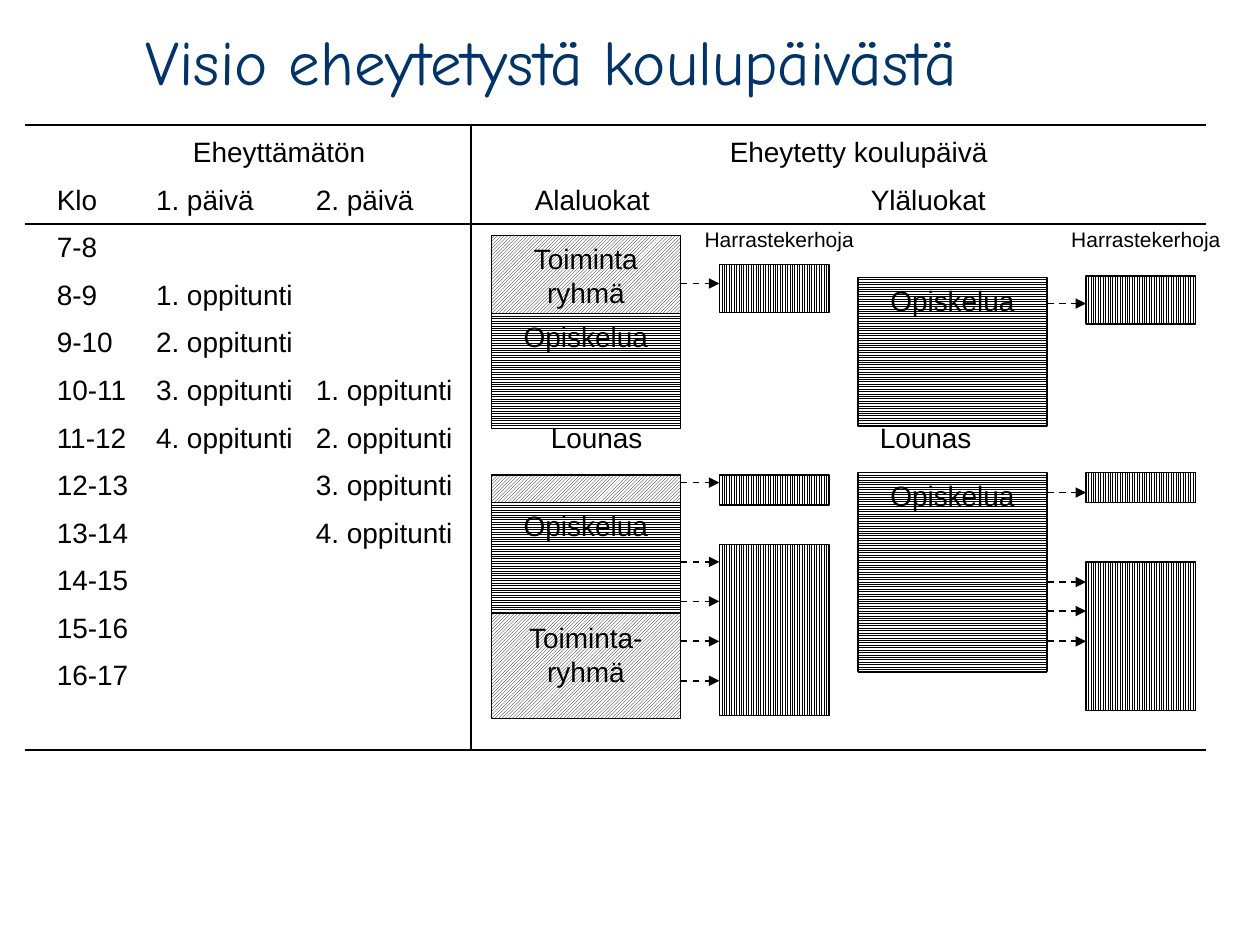
from typing import NamedTuple

import pptx
import pptx.dml.color
import pptx.enum.dml
import pptx.enum.shapes
import pptx.enum.text
import pptx.oxml
import pptx.oxml.ns
import pptx.util
from lxml import etree

Pt = pptx.util.Pt
Pattern = pptx.enum.dml.MSO_PATTERN
Align = pptx.enum.text.PP_ALIGN
Anchor = pptx.enum.text.MSO_ANCHOR

BLACK, WHITE, NAVY = "000000", "FFFFFF", "003366"
ACTIVITY = Pattern.LIGHT_UPWARD_DIAGONAL
STUDY = Pattern.LIGHT_HORIZONTAL
HOBBY = Pattern.LIGHT_VERTICAL
BODY = {"name": "Arial", "size": Pt(16)}
SMALL = {"name": "Arial", "size": Pt(12)}
HEADING = {"name": "Comic Neue", "size": Pt(36)}
CLUB_LABEL = {"vertical_anchor": Anchor.MIDDLE, "margin_left": 0, "margin_right": 0}
PARAGRAPH_GAP = 8
BLOCK_WIDTH, CLUB_WIDTH = 108, 62.6


class Block(NamedTuple):
    top: float
    height: float
    pattern: Pattern
    label: str = ""
    text_inset: float = 3.6


class Grade(NamedTuple):
    left: float
    club_left: float
    blocks: list[Block]
    clubs: list[Block]
    arrow_heights: list[float]


class Row(NamedTuple):
    cells: list[str]
    tabs: list[float]


DAYS = [56.7, 148]
LUNCH = DAYS + [282.3, 470.3]
TIMETABLE = [
    Row(["", "Eheyttämätön", "Eheytetty koulupäivä"], [77.8, 384.6]),
    Row(["Klo", "1. päivä", "2. päivä", "Alaluokat", "Yläluokat"], DAYS + [273.2, 465.2]),
    Row(["7-8"], DAYS),
    Row(["8-9", "1. oppitunti"], DAYS),
    Row(["9-10", "2. oppitunti"], DAYS),
    Row(["10-11", "3. oppitunti", "1. oppitunti"], DAYS),
    Row(["11-12", "4. oppitunti", "2. oppitunti", "Lounas", "Lounas"], LUNCH),
    Row(["12-13", "", "3. oppitunti"], DAYS),
    Row(["13-14", "", "4. oppitunti"], DAYS),
    Row(["14-15"], DAYS),
    Row(["15-16"], DAYS),
    Row(["16-17"], DAYS),
]

LOWER_GRADES = Grade(
    280.8, 411.1,
    [
        Block(134.6, 46.8, ACTIVITY, "Toiminta\vryhmä"),
        Block(179.3, 65.5, STUDY, "Opiskelua"),
        Block(271.4, 27.4, ACTIVITY),
        Block(332.6, 77.8, ACTIVITY, "Toiminta-ryhmä", 22),
        Block(287.3, 63.3, STUDY, "Opiskelua"),
    ],
    [Block(151.2, 27.4, HOBBY), Block(271.4, 17.3, HOBBY), Block(311, 97.9, HOBBY)],
    [162, 275.8, 321.1, 343.7, 366.5, 389],
)
UPPER_GRADES = Grade(
    490.3, 620.6,
    [
        Block(158.4, 85, STUDY, "Opiskelua"),
        Block(270, 113.8, STUDY, "Opiskelua"),
    ],
    [Block(157.7, 27.4, HOBBY), Block(270, 17.3, HOBBY), Block(321.1, 85, HOBBY)],
    [173.5, 281.5, 332.6, 349.2, 366.5],
)


def rgb(value: str) -> pptx.dml.color.RGBColor:
    return pptx.dml.color.RGBColor.from_string(value)


def write(paragraph, text: str, style: dict, color: str = BLACK) -> None:
    paragraph.text = text
    for key, value in style.items():
        setattr(paragraph.font, key, value)
    paragraph.font.color.rgb = rgb(color)


def add_text_frame(slide, left: float, top: float, width: float, height: float, **format_values):
    frame = slide.shapes.add_textbox(Pt(left), Pt(top), Pt(width), Pt(height)).text_frame
    for key, value in ({"word_wrap": True} | format_values).items():
        setattr(frame, key, value)
    return frame


def add_timetable(slide) -> None:
    frame = add_text_frame(slide, 25.4, 73.4, 629.3, 344.2)
    for index, row in enumerate(TIMETABLE):
        paragraph = frame.add_paragraph() if index else frame.paragraphs[0]
        write(paragraph, "\t".join(row.cells), BODY)
        paragraph.space_before = Pt(PARAGRAPH_GAP)
        properties = paragraph._p.get_or_add_pPr()
        stops = pptx.oxml.parse_xml(f"<a:tabLst {pptx.oxml.ns.nsdecls('a')}/>")
        for position in row.tabs:
            etree.SubElement(stops, pptx.oxml.ns.qn("a:tab"), pos=str(Pt(position)), algn="l")
        properties.find(pptx.oxml.ns.qn("a:spcBef")).addnext(stops)


def add_block(slide, left: float, width: float, block: Block) -> None:
    rectangle = slide.shapes.add_shape(
        pptx.enum.shapes.MSO_SHAPE.RECTANGLE, Pt(left), Pt(block.top), Pt(width), Pt(block.height))
    rectangle.shadow.inherit = False
    rectangle.fill.patterned()
    rectangle.fill.pattern = block.pattern
    rectangle.fill.fore_color.rgb = rgb(BLACK)
    rectangle.fill.back_color.rgb = rgb(WHITE)
    rectangle.line.color.rgb = rgb(BLACK)
    rectangle.line.width = Pt(0.75)
    if block.label:
        frame = rectangle.text_frame
        frame.vertical_anchor = Anchor.TOP
        frame.margin_top = Pt(block.text_inset)
        write(frame.paragraphs[0], block.label, BODY)
        frame.paragraphs[0].alignment = Align.CENTER


def add_line(slide, x1: float, y1: float, x2: float, y2: float, width: float = 1.25):
    line = slide.shapes.add_connector(
        pptx.enum.shapes.MSO_CONNECTOR.STRAIGHT, Pt(x1), Pt(y1), Pt(x2), Pt(y2))
    line.line.color.rgb = rgb(BLACK)
    line.line.width = Pt(width)
    etree.SubElement(line._element.spPr, pptx.oxml.ns.qn("a:effectLst"))
    return line


def add_arrow(slide, x1: float, x2: float, y: float) -> None:
    arrow = add_line(slide, x1, y, x2, y, 1)
    arrow.line.dash_style = pptx.enum.dml.MSO_LINE.DASH
    etree.SubElement(arrow.line._get_or_add_ln(), pptx.oxml.ns.qn("a:tailEnd"), type="triangle")


def add_grade(slide, grade: Grade) -> None:
    for block in grade.blocks:
        add_block(slide, grade.left, BLOCK_WIDTH, block)
    for club in grade.clubs:
        add_block(slide, grade.club_left, CLUB_WIDTH, club)
    for height in grade.arrow_heights:
        add_arrow(slide, grade.left + BLOCK_WIDTH, grade.club_left, height)
    frame = add_text_frame(slide, grade.club_left - 13.8, 128.2, 96, 17.3, **CLUB_LABEL)
    write(frame.paragraphs[0], "Harrastekerhoja", SMALL)
    frame.paragraphs[0].alignment = Align.CENTER


def main() -> None:
    presentation = pptx.Presentation()
    presentation.slide_width, presentation.slide_height = Pt(720), Pt(540)
    slide = presentation.slides.add_slide(presentation.slide_layouts[6])

    add_timetable(slide)
    for grade in (LOWER_GRADES, UPPER_GRADES):
        add_grade(slide, grade)
    for rule_height in (71.3, 128.2, 428.4):
        add_line(slide, 14.4, rule_height, 689, rule_height)
    add_line(slide, 269.3, 71.3, 269.3, 428.4)
    title = add_text_frame(slide, 76.3, 9.4, 572.4, 50.4)
    write(title.paragraphs[0], "Visio eheytetystä koulupäivästä", HEADING, NAVY)

    presentation.save("out.pptx")


if __name__ == "__main__":
    main()
